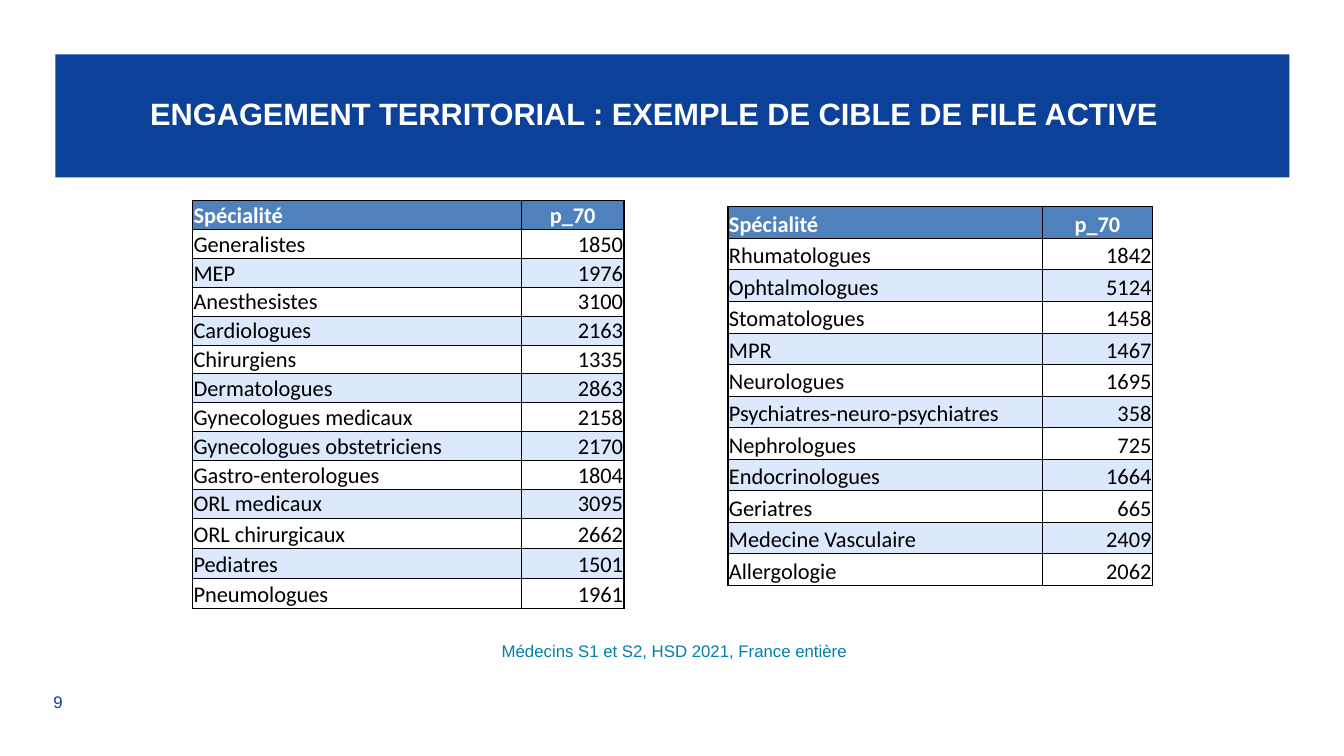
from lxml.etree import SubElement
from pptx import Presentation
from pptx.dml.color import RGBColor
from pptx.enum.shapes import MSO_SHAPE
from pptx.enum.text import MSO_ANCHOR, PP_ALIGN
from pptx.oxml.ns import qn
from pptx.util import Inches, Pt

NAVY = RGBColor(0x0C, 0x41, 0x9A)
TEAL = RGBColor(0x00, 0x7F, 0xAD)
HEADER_BLUE = RGBColor(0x4F, 0x81, 0xBD)
BAND_BLUE = RGBColor(0xDC, 0xE8, 0xFC)
WHITE = RGBColor(0xFF, 0xFF, 0xFF)
BLACK = RGBColor(0x00, 0x00, 0x00)

HEADER = ("Spécialité", "p_70")
LEFT_TARGETS = [
    ("Generalistes", 1850),
    ("MEP", 1976),
    ("Anesthesistes", 3100),
    ("Cardiologues", 2163),
    ("Chirurgiens", 1335),
    ("Dermatologues", 2863),
    ("Gynecologues medicaux", 2158),
    ("Gynecologues obstetriciens", 2170),
    ("Gastro-enterologues", 1804),
    ("ORL medicaux", 3095),
    ("ORL chirurgicaux", 2662),
    ("Pediatres", 1501),
    ("Pneumologues", 1961),
]
RIGHT_TARGETS = [
    ("Rhumatologues", 1842),
    ("Ophtalmologues", 5124),
    ("Stomatologues", 1458),
    ("MPR", 1467),
    ("Neurologues", 1695),
    ("Psychiatres-neuro-psychiatres", 358),
    ("Nephrologues", 725),
    ("Endocrinologues", 1664),
    ("Geriatres", 665),
    ("Medecine Vasculaire", 2409),
    ("Allergologie", 2062),
]


def write(frame, text, font_name, size, color, bold=False, align=PP_ALIGN.LEFT):
    frame.text = text
    para = frame.paragraphs[0]
    para.alignment = align
    font = para.runs[0].font
    font.name = font_name
    font.size = Pt(size)
    font.color.rgb = color
    font.bold = bold
    return para


def add_title_band(page, left, top, width, height, text):
    band = page.shapes.add_shape(
        MSO_SHAPE.RECTANGLE, Inches(left), Inches(top), Inches(width), Inches(height))
    band.shadow.inherit = False
    band.fill.solid()
    band.fill.fore_color.rgb = NAVY
    band.line.fill.background()
    frame = band.text_frame
    frame.word_wrap = True
    frame.vertical_anchor = MSO_ANCHOR.MIDDLE
    frame.margin_left = Inches(0.94)
    frame.margin_top = frame.margin_right = frame.margin_bottom = Inches(0.08)
    write(frame, text, "Arial", 22, WHITE, bold=True).line_spacing = 0.9


def add_label(page, left, top, width, height, text, color, align=PP_ALIGN.LEFT):
    box = page.shapes.add_textbox(
        Inches(left), Inches(top), Inches(width), Inches(height))
    frame = box.text_frame
    frame.word_wrap = True
    write(frame, text, "Arial", 12, color, align=align)
    return frame


def add_borders(cell, outer_sides):
    properties = cell._tc.get_or_add_tcPr()
    for side in "LRTB":
        width = Pt(1) if side in outer_sides else Pt(0.5)
        line = SubElement(properties, qn(f"a:ln{side}"), w=str(width))
        fill = SubElement(line, qn("a:solidFill"))
        SubElement(fill, qn("a:srgbClr"), val=str(BLACK))


def format_cell(cell, text, row, column, last_row):
    outer_sides = "LR"[column]
    if row == 0:
        outer_sides += "T"
    if row == last_row:
        outer_sides += "B"
    add_borders(cell, outer_sides)
    if row == 0:
        cell.fill.solid()
        cell.fill.fore_color.rgb = HEADER_BLUE
    elif row % 2 == 0:
        cell.fill.solid()
        cell.fill.fore_color.rgb = BAND_BLUE
    else:
        cell.fill.background()
    cell.margin_left = cell.margin_top = cell.margin_right = Inches(0.01)
    cell.margin_bottom = 0
    cell.vertical_anchor = MSO_ANCHOR.BOTTOM
    number_align = PP_ALIGN.CENTER if row == 0 else PP_ALIGN.RIGHT
    write(cell.text_frame, text, "Calibri", 16, WHITE if row == 0 else BLACK,
          bold=row == 0, align=number_align if column else PP_ALIGN.LEFT)


def add_target_table(page, left, top, width, height, number_width, targets, tall_rows=0):
    records = [HEADER] + targets
    table = page.shapes.add_table(
        len(records), 2, Inches(left), Inches(top), Inches(width), Inches(height)).table
    table.columns[0].width = Inches(width - number_width)
    table.columns[1].width = Inches(number_width)
    tall_height = 0.3
    regular_rows = len(records) - tall_rows
    regular_height = (height - tall_rows * tall_height) / regular_rows
    for row, record in enumerate(records):
        table.rows[row].height = Inches(
            regular_height if row < regular_rows else tall_height)
        for column, value in enumerate(record):
            format_cell(table.cell(row, column), str(value), row, column, len(records) - 1)


def main():
    deck = Presentation()
    deck.slide_width = Inches(13.33)
    deck.slide_height = Inches(7.5)
    page = deck.slides.add_slide(deck.slide_layouts[6])
    add_title_band(page, 0.55, 0.54, 12.24, 1.22,
                   "ENGAGEMENT TERRITORIAL : EXEMPLE DE CIBLE DE FILE ACTIVE")
    add_target_table(page, 1.91, 1.99, 4.28, 4.05, 1.02, LEFT_TARGETS, tall_rows=3)
    add_target_table(page, 7.22, 2.05, 4.21, 3.76, 1.09, RIGHT_TARGETS)
    caption = add_label(page, 1.02, 6.29, 11.34, 0.4,
                        "Médecins S1 et S2, HSD 2021, France entière",
                        TEAL, PP_ALIGN.CENTER)
    caption.paragraphs[0].line_spacing = 1.1
    number = add_label(page, 0.43, 6.81, 0.79, 0.31, "9", NAVY)
    number.vertical_anchor = MSO_ANCHOR.MIDDLE
    deck.save("out.pptx")


if __name__ == "__main__":
    main()
